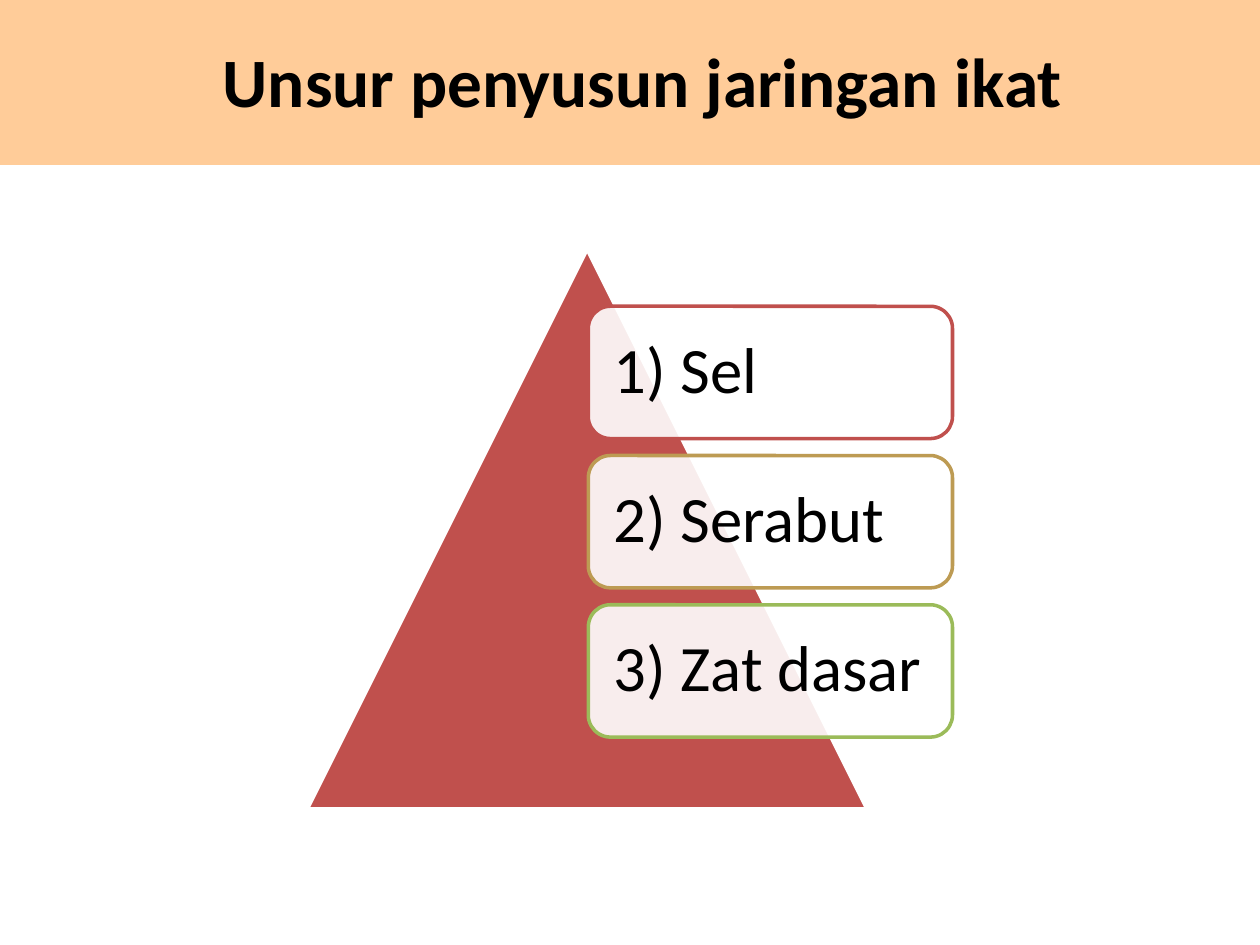
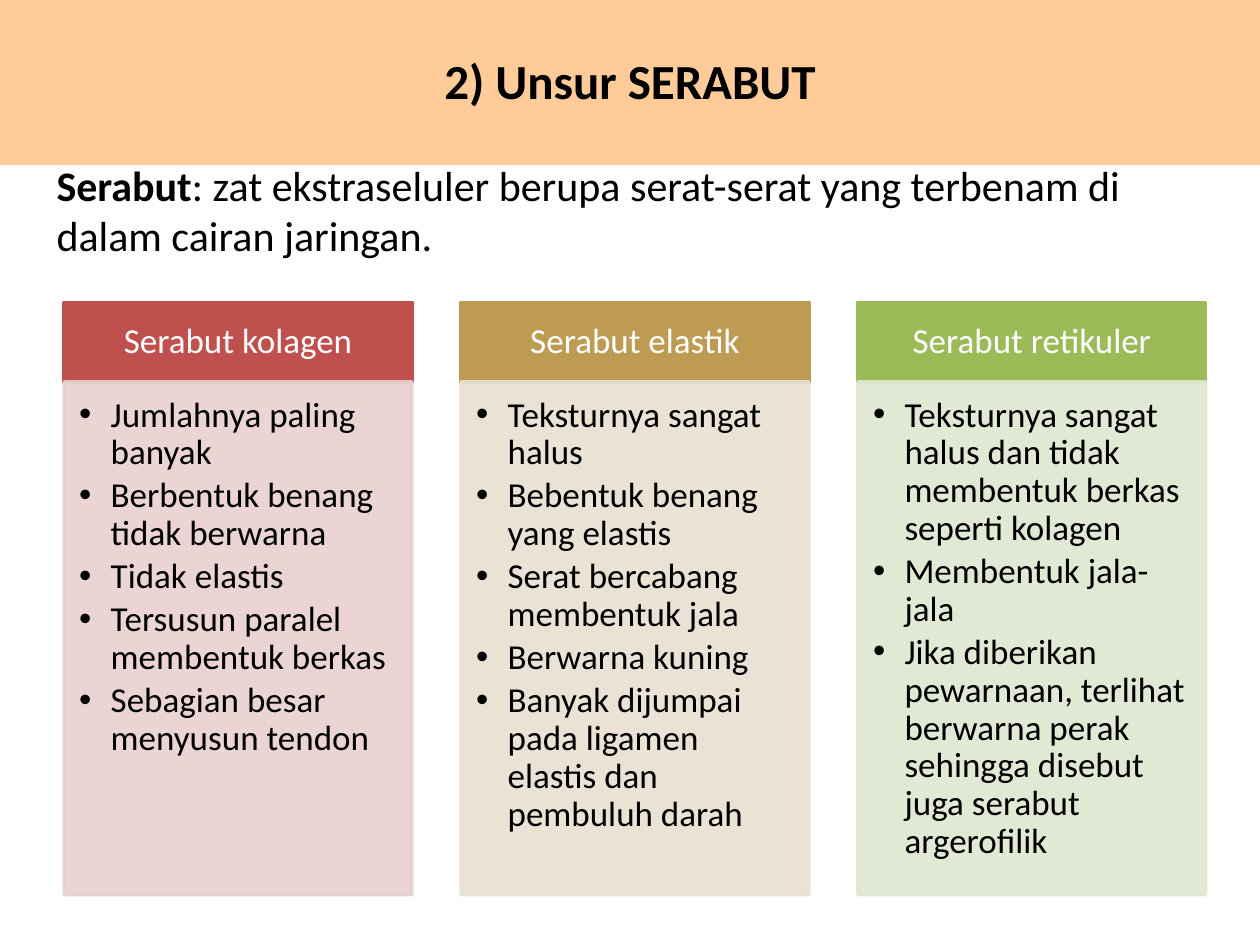
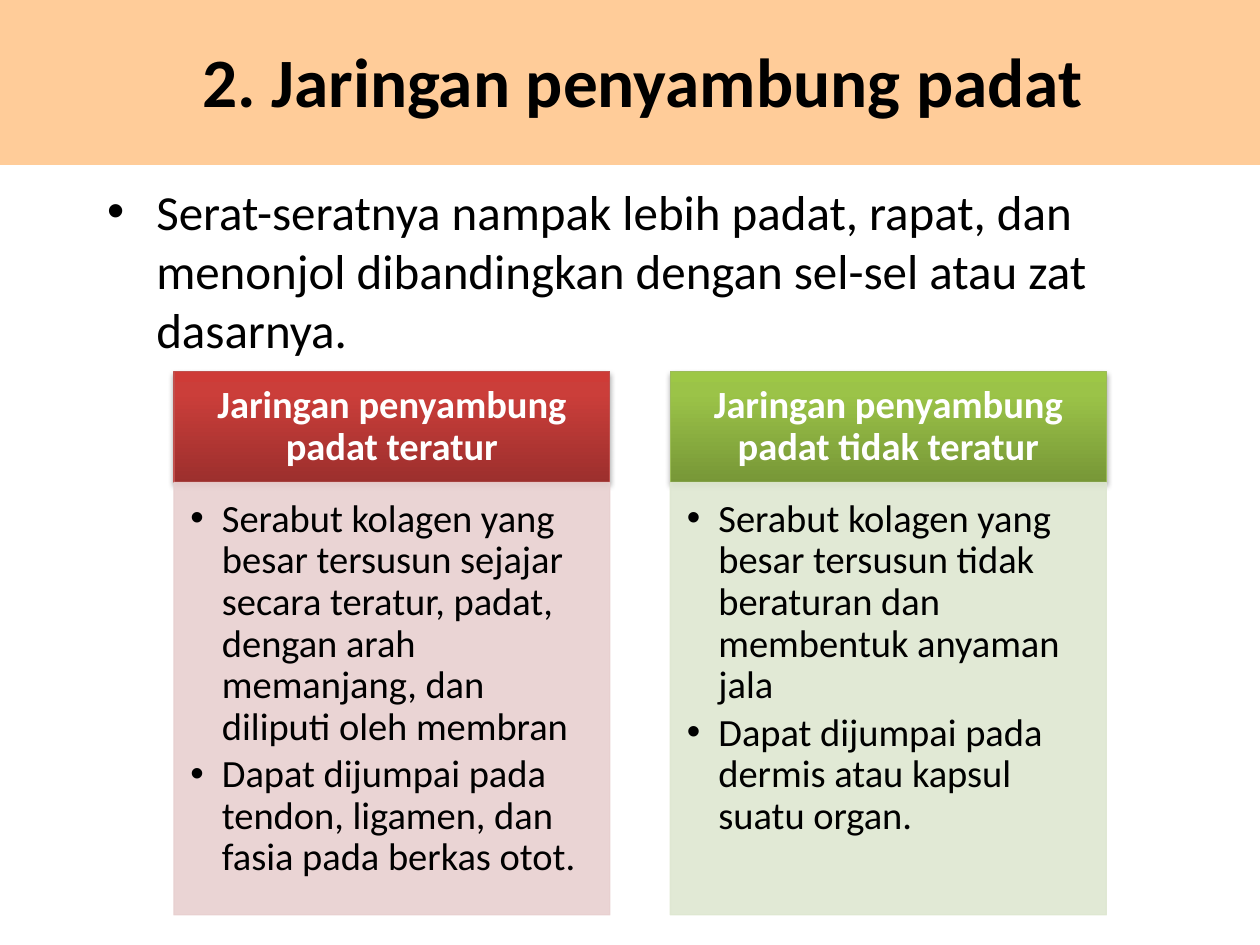
from copy import deepcopy

from pptx import Presentation
from pptx.dml import color as dml_color
from pptx.enum import shapes, text
from pptx.oxml import ns, xmlchemy
from pptx.util import Pt

FONT = "Calibri"
BLACK, WHITE, BAND = "000000", "FFFFFF", "FFCC99"
RED, GOLD, GREEN = "C0504D", "BD9B53", "9BBB59"
TINTS = {RED: "E8D0D0", GOLD: "E8E1D1", GREEN: "DEE7D1"}
GRADIENTS = {
    RED: [(0, "9C2F2D"), (0.8, "CB3E3A"), (1, "CE3B37")],
    GREEN: [(0, "779737"), (0.8, "9BC348"), (1, "9DC746")],
}
TITLE_ONLY, TITLE_AND_BODY = 5, 1


def rgb(hex_string):
    return dml_color.RGBColor.from_string(hex_string)


def add_element(parent, tag, **attributes):
    element = xmlchemy.OxmlElement(tag)
    for name, value in attributes.items():
        element.set(name, str(value))
    parent.append(element)
    return element


class Deck:
    """Holds the shared style and the current slide."""

    def __init__(self):
        self.presentation = Presentation()
        self.presentation.slide_width = Pt(720)
        self.presentation.slide_height = Pt(540)
        self.slide = None

    def new_slide(self, title, size=39.6, indent=14.4, layout=TITLE_ONLY):
        self.slide = self.presentation.slides.add_slide(
            self.presentation.slide_layouts[layout])
        band = self.box((0, 0, 720, 94.3), BAND)
        self.slide.shapes._spTree.insert(2, band._element)  # behind the title
        placeholder = self.slide.shapes.title
        self.place(placeholder, (20.9, 25.9, 678.2, 39.6))
        self.set_text(placeholder, [title], size, bold=True, indent=indent,
                      align=text.PP_ALIGN.CENTER)

    def place(self, shape, area):
        shape.left, shape.top, shape.width, shape.height = map(Pt, area)

    def box(self, area, fill, line=None, width=2, opacity=100, line_opacity=100,
            kind=shapes.MSO_SHAPE.RECTANGLE):
        shape = self.slide.shapes.add_shape(kind, *map(Pt, area))
        shape.shadow.inherit = False
        shape.fill.solid()
        shape.fill.fore_color.rgb = rgb(fill)
        properties = shape._element.spPr
        self.fade(properties.find(ns.qn("a:solidFill")), opacity)
        if line:
            shape.line.color.rgb = rgb(line)
            shape.line.width = Pt(width)
            self.fade(properties.find(ns.qn("a:ln")), line_opacity)
        else:
            shape.line.fill.background()
        return shape

    def fade(self, element, opacity):
        if opacity < 100:
            color = element.find(".//" + ns.qn("a:srgbClr"))
            add_element(color, "a:alpha", val=opacity * 1000)

    def gradient(self, shape, stops):
        shape.fill.gradient()
        shape.fill.gradient_angle = 90
        stop_list = shape._element.spPr.find(".//" + ns.qn("a:gsLst"))
        stop_list.append(deepcopy(stop_list[-1]))
        for stop, (position, color) in zip(shape.fill.gradient_stops, stops):
            stop.position = position
            stop.color.rgb = rgb(color)

    def drop_shadow(self, shape):
        effects = shape._element.spPr.find(ns.qn("a:effectLst"))
        shadow = add_element(effects, "a:outerShdw", blurRad=Pt(3.1), dist=Pt(1.8),
                             dir=90 * 60000, rotWithShape=0)
        color = add_element(shadow, "a:srgbClr", val=BLACK)
        add_element(color, "a:alpha", val=35000)

    def set_text(self, shape, paragraphs, size, color=BLACK, bold=False,
                 align=text.PP_ALIGN.LEFT, anchor=text.MSO_ANCHOR.MIDDLE, spacing=1,
                 after=0, indent=0, bullet=False, margins=(7.2, 3.6, 7.2, 3.6)):
        frame = shape.text_frame
        frame.text = "\n".join(paragraphs)
        frame.word_wrap = True
        frame.auto_size = text.MSO_AUTO_SIZE.NONE
        frame.vertical_anchor = anchor
        (frame.margin_left, frame.margin_top,
         frame.margin_right, frame.margin_bottom) = map(Pt, margins)
        for paragraph in frame.paragraphs:
            paragraph.alignment = align
            paragraph.line_spacing = spacing
            paragraph.space_before = Pt(0)
            paragraph.space_after = Pt(after)
            properties = paragraph._p.get_or_add_pPr()
            properties.set("marL", str(Pt(indent)))
            properties.set("indent", str(Pt(-indent if bullet else 0)))
            if bullet:
                add_element(properties, "a:buFont", typeface="Arial")
                add_element(properties, "a:buChar", char="•")
            for run in paragraph.runs:
                self.format_run(run, size, color, bold)

    def format_run(self, run, size, color=BLACK, bold=False):
        run.font.name = FONT
        run.font.size = Pt(size)
        run.font.bold = bold
        run.font.color.rgb = rgb(color)

    def definition(self, area, term, meaning, size):
        shape = self.slide.shapes.add_textbox(*map(Pt, area))
        self.set_text(shape, [term], size, bold=True)
        run = shape.text_frame.paragraphs[0].add_run()
        run.text = meaning
        self.format_run(run, size)

    def columns(self, items, left, top, step, width, header_height, body_height,
                size, glossy=False):
        """Coloured headers, each above a tinted panel with a bulleted list."""
        line = 0.75 if glossy else 2
        side, edge, inset = size * 0.56, size * 0.32, size * 0.43
        for index, (heading, color, points) in enumerate(items):
            x = left + index * step
            header = self.box((x, top, width, header_height), color, color, line)
            if glossy:
                self.gradient(header, GRADIENTS[color])
                self.drop_shadow(header)
            self.set_text(header, [heading], size, WHITE, glossy,
                          text.PP_ALIGN.CENTER, spacing=0.9,
                          margins=(side, edge, side, edge))
            tint = TINTS[color]
            panel = self.box((x, top + header_height, width, body_height), tint,
                             tint, line, opacity=90, line_opacity=90)
            self.set_text(panel, points, size, anchor=text.MSO_ANCHOR.TOP,
                          spacing=0.9, after=size * 0.15, indent=18, bullet=True,
                          margins=(inset, inset, side, size * 0.62))


def main():
    deck = Deck()

    # Elements of connective tissue
    deck.new_slide("Unsur penyusun jaringan ikat")
    deck.box((175.7, 142.6, 319.7, 319.7), RED, WHITE,
             kind=shapes.MSO_SHAPE.ISOSCELES_TRIANGLE)
    elements = [("1) Sel", RED), ("2) Serabut", GOLD), ("3) Zat dasar", GREEN)]
    for index, (label, color) in enumerate(elements):
        card = deck.box((336.2, 175 + index * 85.3, 208.1, 75.6), WHITE, color,
                        opacity=90, kind=shapes.MSO_SHAPE.ROUNDED_RECTANGLE)
        deck.set_text(card, [label], 37, spacing=0.9, margins=(10.8,) * 4)

    # Fibres
    deck.new_slide("2) Unsur SERABUT", size=28, indent=0)
    fibres = [
        ("Serabut kolagen", RED, [
            "Jumlahnya paling banyak",
            "Berbentuk benang tidak berwarna",
            "Tidak elastis",
            "Tersusun paralel membentuk berkas",
            "Sebagian besar menyusun tendon"]),
        ("Serabut elastik", GOLD, [
            "Teksturnya sangat halus",
            "Bebentuk benang yang elastis",
            "Serat bercabang membentuk jala",
            "Berwarna kuning",
            "Banyak dijumpai pada ligamen elastis dan pembuluh darah"]),
        ("Serabut retikuler", GREEN, [
            "Teksturnya sangat halus dan tidak membentuk berkas seperti kolagen",
            "Membentuk jala-jala",
            "Jika diberikan pewarnaan, terlihat berwarna perak sehingga disebut "
            "juga serabut argerofilik"]),
    ]
    deck.columns(fibres, left=36.7, top=172.8, step=226.8, width=198.7,
                 header_height=45.4, body_height=293, size=20)
    deck.definition((25.2, 100.1, 678.2, 39.6), "Serabut",
                    ": zat ekstraseluler berupa serat-serat yang terbenam di "
                    "dalam cairan jaringan.", 24)

    # Dense connective tissue
    deck.new_slide("2. Jaringan penyambung padat", layout=TITLE_AND_BODY)
    body = deck.slide.placeholders[1]
    deck.place(body, (54, 100.1, 617.8, 108.7))
    deck.set_text(body, ["Serat-seratnya nampak lebih padat, rapat, dan menonjol "
                         "dibandingkan dengan sel-sel atau zat dasarnya."],
                  28, anchor=text.MSO_ANCHOR.TOP, indent=28.1, bullet=True)
    tissues = [
        ("Jaringan penyambung padat teratur", RED, [
            "Serabut kolagen yang besar tersusun sejajar secara teratur, padat, "
            "dengan arah memanjang, dan diliputi oleh membran",
            "Dapat dijumpai pada tendon, ligamen, dan fasia pada berkas otot."]),
        ("Jaringan penyambung padat tidak teratur", GREEN, [
            "Serabut kolagen yang besar tersusun tidak beraturan dan membentuk "
            "anyaman jala",
            "Dapat dijumpai pada dermis atau kapsul suatu organ."]),
    ]
    deck.columns(tissues, left=99.4, top=212.1, step=283.7, width=249.1,
                 header_height=63.7, body_height=247, size=22, glossy=True)

    deck.presentation.save("out.pptx")


if __name__ == "__main__":
    main()
